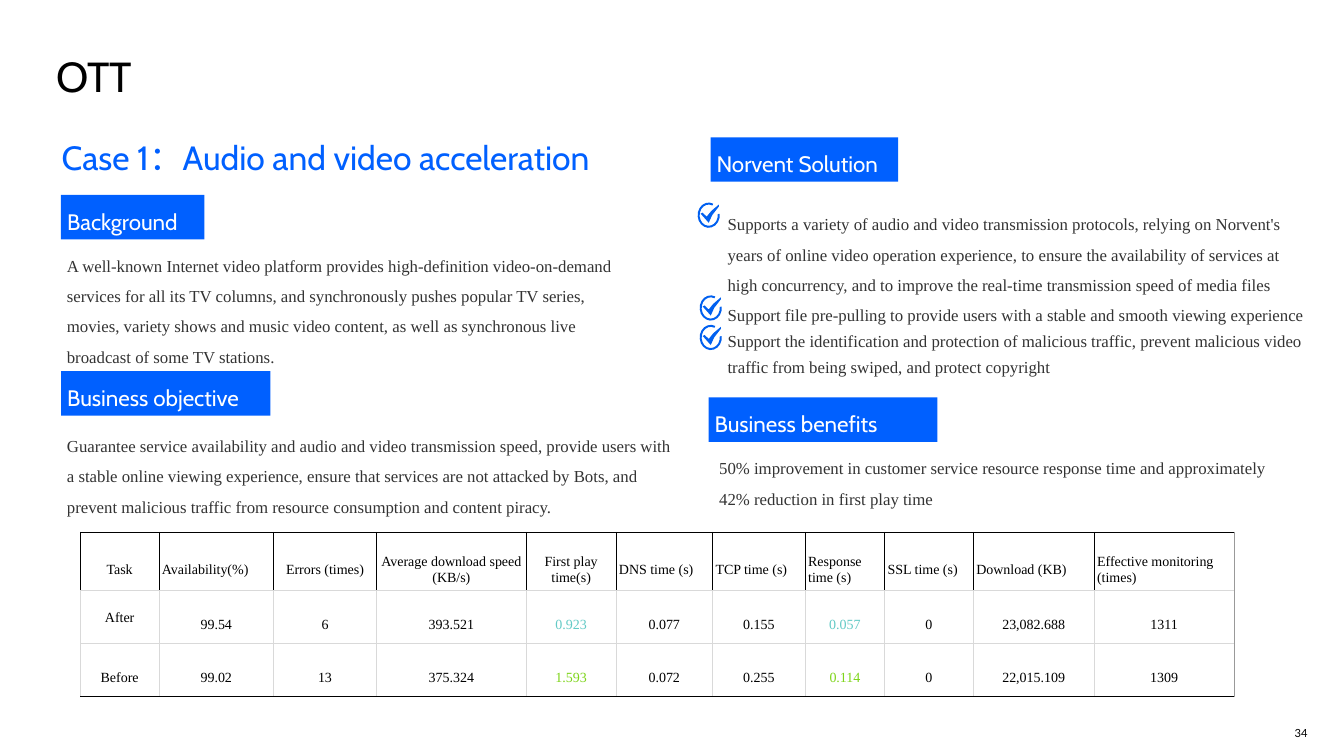
from dataclasses import dataclass
from math import cos, radians, sin

from lxml.etree import SubElement
from pptx import Presentation
from pptx.dml.color import RGBColor
from pptx.enum.shapes import MSO_SHAPE
from pptx.enum.text import MSO_ANCHOR, MSO_AUTO_SIZE, PP_ALIGN
from pptx.oxml.ns import qn
from pptx.slide import Slide
from pptx.table import _Cell
from pptx.text.text import TextFrame
from pptx.util import Inches, Pt

W, H = Inches(13.33), Inches(7.5)
BLUE, ICON_BLUE, BLACK, GREY = "0060FF", "0060F0", "000000", "333333"
RULE, EDGE, TEAL, GREEN = "D9D9D9", "999999", "63CAC6", "7ED51A"
HEAD, BODY, SANS = "Cabin", "Times New Roman", "Lato"
LEFT, CENTER = PP_ALIGN.LEFT, PP_ALIGN.CENTER


@dataclass(frozen=True)
class Area:
    """A rectangle in percent of the slide's width and height."""
    x: float
    y: float
    w: float
    h: float

    def emu(self) -> tuple[int, int, int, int]:
        """Return left, top, width and height in EMU."""
        return (round(W * self.x / 100), round(H * self.y / 100),
                round(W * self.w / 100), round(H * self.h / 100))


@dataclass(frozen=True)
class Style:
    """The look of a run and its paragraph."""
    size: float
    font: str
    color: str
    spacing: float = 1.0
    align: PP_ALIGN = LEFT


@dataclass(frozen=True)
class Block:
    """Paragraphs with their line spacing in one area."""
    area: Area
    paragraphs: tuple[tuple[str, float], ...]


@dataclass(frozen=True)
class Label:
    """A heading on a blue bar."""
    text: str
    x: float
    y: float
    w: float


BLOCKS = [
    Block(Area(4.53, 31.67, 43.44, 17.33), ((
        "A well-known Internet video platform provides high-definition video-on-demand services "
        "for all its TV columns, and synchronously pushes popular TV series, movies, variety shows "
        "and music video content, as well as synchronous live broadcast of some TV stations.", 1.5),)),
    Block(Area(4.53, 55.53, 46.36, 13.33), ((
        "Guarantee service availability and audio and video transmission speed, provide users with "
        "a stable online viewing experience, ensure that services are not attacked by Bots, and "
        "prevent malicious traffic from resource consumption and content piracy.", 1.5),)),
    Block(Area(53.06, 58.45, 44.11, 9.33), ((
        "50% improvement in customer service resource response time and approximately "
        "42% reduction in first play time", 1.5),)),
    Block(Area(53.69, 26.19, 44.34, 24.27), (
        ("Supports a variety of audio and video transmission protocols, relying on Norvent's years "
         "of online video operation experience, to ensure the availability of services at high "
         "concurrency, and to improve the real-time transmission speed of media files", 1.5),
        ("Support file pre-pulling to provide users with a stable and smooth viewing experience", 1.5),
        ("Support the identification and protection of malicious traffic, prevent malicious video "
         "traffic from being swiped, and protect copyright", 1.3))),
]
LABELS = [
    Label("Background", 4.54, 25.79, 10.68),
    Label("Business objective", 4.54, 49.1, 15.58),
    Label("Norvent Solution", 52.87, 18.18, 13.95),
    Label("Business benefits", 52.72, 52.58, 17.03),
]
CHECKS = [(51.91, 26.8), (52.06, 39.07), (52.06, 42.97)]
TICK = [(110, 200), (30, 110), (50, 100), (90, 140), (135, 84), (210, 20), (210, 40), (145, 124)]

COLUMNS = [0.78, 1.14, 1.02, 1.49, 0.89, 0.96, 0.92, 0.79, 0.88, 1.2, 1.39]
ROWS = [7.7, 7, 7]
CENTERED_HEADS = {0, 2, 3, 4}
IMPROVED = {4, 7}
RECORDS = [
    ["Task", "Availability(%)", "Errors (times)", "Average download speed (KB/s)",
     "First play time(s)", "DNS time (s)", "TCP time (s)", "Response time (s)",
     "SSL time (s)", "Download (KB)", "Effective monitoring (times)"],
    ["After", "99.54", "6", "393.521", "0.923", "0.077", "0.155", "0.057", "0",
     "23,082.688", "1311"],
    ["Before", "99.02", "13", "375.324", "1.593", "0.072", "0.255", "0.114", "0",
     "22,015.109", "1309"],
]


def rgb(color: str) -> RGBColor:
    """Turn a hex string into a colour."""
    return RGBColor.from_string(color)


def frame(tf: TextFrame, inset: float = 0.06, anchor: MSO_ANCHOR = MSO_ANCHOR.TOP,
          wrap: bool = True) -> None:
    """Set insets, anchor and wrapping of a text frame."""
    tf.auto_size = MSO_AUTO_SIZE.NONE
    tf.word_wrap = wrap
    tf.vertical_anchor = anchor
    tf.margin_left = tf.margin_right = tf.margin_top = tf.margin_bottom = Inches(inset)


def write(tf: TextFrame, text: str, style: Style, first: bool = True) -> None:
    """Write one paragraph as one run."""
    p = tf.paragraphs[0] if first else tf.add_paragraph()
    p.alignment, p.line_spacing = style.align, style.spacing
    r = p.add_run()
    r.text = text
    r.font.size, r.font.name = Pt(style.size), style.font
    r.font.color.rgb = rgb(style.color)


def add_text(s: Slide, area: Area, text: str, style: Style,
             anchor: MSO_ANCHOR = MSO_ANCHOR.TOP, wrap: bool = True) -> None:
    """Add a text box with one paragraph."""
    tf = s.shapes.add_textbox(*area.emu()).text_frame
    frame(tf, anchor=anchor, wrap=wrap)
    write(tf, text, style)


def add_block(s: Slide, block: Block) -> None:
    """Add a text box of body paragraphs."""
    tf = s.shapes.add_textbox(*block.area.emu()).text_frame
    frame(tf)
    for i, (text, spacing) in enumerate(block.paragraphs):
        write(tf, text, Style(12, BODY, GREY, spacing), i == 0)


def add_label(s: Slide, label: Label) -> None:
    """Add a heading bar."""
    sp = s.shapes.add_shape(MSO_SHAPE.RECTANGLE, *Area(label.x, label.y, label.w, 5.87).emu())
    sp.shadow.inherit = False
    sp.fill.solid()
    sp.fill.fore_color.rgb = rgb(BLUE)
    sp.line.fill.background()
    frame(sp.text_frame, anchor=MSO_ANCHOR.MIDDLE)
    write(sp.text_frame, label.text, Style(16, HEAD, "FFFFFF", 1.3))


def arc(rx: float, ry: float, start: int, end: int) -> list[tuple[float, float]]:
    """Return points on an ellipse around the icon's centre."""
    step = 20 if end > start else -20
    return [(110 + rx * cos(radians(a)), 125 + ry * sin(radians(a)))
            for a in range(start, end + step, step)]


def add_check(s: Slide, x: float, y: float) -> None:
    """Add a tick inside an open ring."""
    ring = arc(90, 105, -6, 294) + arc(110, 125, 294, -6)
    fb = s.shapes.build_freeform(*TICK[0], scale=W / 13330)
    fb.add_line_segments(TICK[1:], close=True)
    fb.move_to(*ring[0])
    fb.add_line_segments(ring[1:], close=True)
    sp = fb.convert_to_shape(*Area(x, y, 0, 0).emu()[:2])
    sp.shadow.inherit = False
    sp.fill.solid()
    sp.fill.fore_color.rgb = rgb(ICON_BLUE)
    sp.line.fill.background()


def set_borders(cell: _Cell, left: str, right: str, top: str, bottom: str) -> None:
    """Draw the four borders of a cell."""
    tc_pr = cell._tc.get_or_add_tcPr()
    for side, color in zip("LRTB", (left, right, top, bottom)):
        ln = SubElement(tc_pr, qn(f"a:ln{side}"), w=str(Pt(0.6)))
        SubElement(SubElement(ln, qn("a:solidFill")), qn("a:srgbClr"), val=color)


def add_results(s: Slide, area: Area) -> None:
    """Add the table of measurements."""
    table = s.shapes.add_table(len(ROWS), len(COLUMNS), *area.emu()).table
    table.first_row = table.horz_banding = False
    for col, share in zip(table.columns, COLUMNS):
        col.width = round(W * area.w / 100 * share / sum(COLUMNS))
    for row, share in zip(table.rows, ROWS):
        row.height = round(H * share / 100)
    for i, record in enumerate(RECORDS):
        for j, text in enumerate(record):
            cell = table.cell(i, j)
            inner = RULE if i else BLACK
            set_borders(cell, inner, EDGE if j == len(COLUMNS) - 1 else inner, inner,
                        BLACK if i == len(ROWS) - 1 else RULE)
            cell.fill.background()
            cell.vertical_anchor = MSO_ANCHOR.MIDDLE
            cell.margin_left = cell.margin_right = Inches(0.03)
            cell.margin_top = Inches(0.03 if text == "After" else 0.18 if i else 0.19)
            cell.margin_bottom = Inches(0.02)
            color = (BLACK, TEAL, GREEN)[i] if j in IMPROVED else BLACK
            align = CENTER if i or j in CENTERED_HEADS else LEFT
            write(cell.text_frame, text, Style(10, BODY, color, align=align))


def main() -> None:
    """Build and save the slide."""
    prs = Presentation()
    prs.slide_width, prs.slide_height = W, H
    s = prs.slides.add_slide(prs.slide_layouts[5])
    title = s.shapes.title
    title.left, title.top, title.width, title.height = Area(4.18, 5.33, 21.53, 8).emu()
    frame(title.text_frame, inset=0)
    write(title.text_frame, "OTT", Style(30, HEAD, BLACK, 1.2))
    add_text(s, Area(4.14, 15.87, 44.26, 8.27), "Case 1：Audio and video acceleration",
             Style(24, HEAD, BLUE, 1.3), MSO_ANCHOR.MIDDLE)
    add_text(s, Area(95.87, 95.33, 1.88, 3.33), "34", Style(8, SANS, BLACK, align=CENTER), wrap=False)
    for block in BLOCKS:
        add_block(s, block)
    for x, y in CHECKS:
        add_check(s, x, y)
    add_results(s, Area(5.98, 70.4, 85.85, sum(ROWS)))
    for label in LABELS:
        add_label(s, label)
    prs.save("out.pptx")


if __name__ == "__main__":
    main()
